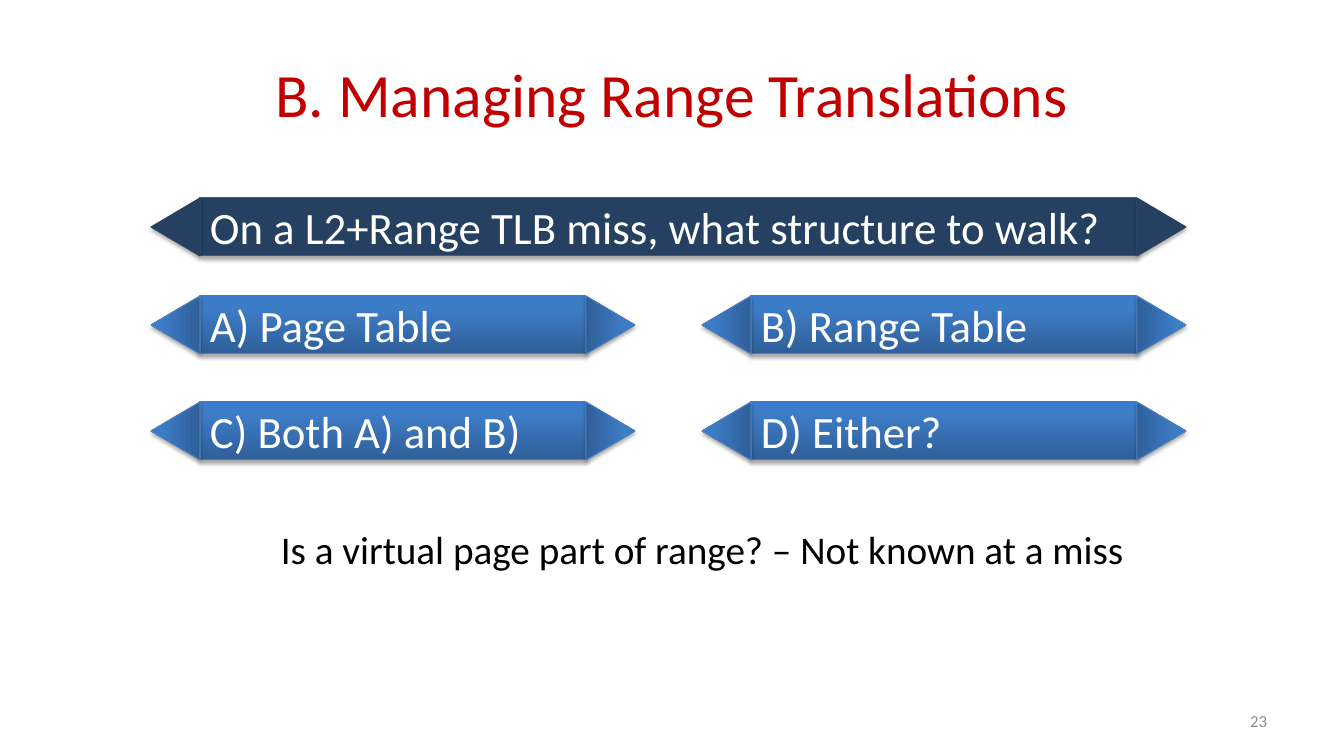
from copy import deepcopy

from lxml import etree
from pptx import Presentation
from pptx import util as u
from pptx.dml.color import RGBColor
from pptx.enum import shapes, text
from pptx.oxml.ns import qn

# Content
TITLE = "B. Managing Range Translations"
QUESTION = "On a L2+Range TLB miss, what structure to walk?"
ANSWERS = [
    ["A) Page Table", "B) Range Table"],
    ["C) Both A) and B)", "D) Either?"],
]
REMARK = "Is a virtual page part of range? – Not known at a miss"
PAGE_NUMBER = "23"

# Colours
RED = RGBColor(0xC0, 0x00, 0x00)
GRAY = RGBColor(0x8C, 0x8C, 0x8C)
BLACK = RGBColor(0x00, 0x00, 0x00)
WHITE = RGBColor(0xFF, 0xFF, 0xFF)
NAVY = RGBColor(0x25, 0x40, 0x61)
NAVY_EDGE = RGBColor(0x37, 0x60, 0x92)
BLUE_EDGE = RGBColor(0x4B, 0x7E, 0xBC)
BLUE_STOPS = [
    (0, RGBColor(0x2F, 0x5F, 0x99)),
    (0.8, RGBColor(0x3D, 0x7C, 0xC7)),
    (1, RGBColor(0x3A, 0x7C, 0xCB)),
]

# Layout in px
LEFT, RIGHT = 200, 1137
ANSWER_WIDTH = 386
BAR_HEIGHT, TIP_LENGTH = 58, 49
QUESTION_TOP, ANSWER_TOP, ROW_STEP = 198, 296, 106


def px(length):
    return round(length * 914400 / 100.8)


def box(left, top, width, height):
    return [px(length) for length in (left, top, width, height)]


def write(frame, words, size, color, align=text.PP_ALIGN.LEFT,
          anchor=text.MSO_ANCHOR.MIDDLE):
    frame.word_wrap = True
    frame.vertical_anchor = anchor
    paragraph = frame.paragraphs[0]
    paragraph.alignment = align
    run = paragraph.add_run()
    run.text = words
    run.font.name = "Calibri"
    run.font.size = u.Pt(size)
    run.font.color.rgb = color


def paint(part, edge, solid=None):
    """Fill with one colour, or with the blue gradient, and add a soft shadow."""
    properties = part._element.spPr
    if solid is not None:
        part.fill.solid()
        part.fill.fore_color.rgb = solid
    else:
        part.fill.gradient()
        part.fill.gradient_angle = 90
        stops = properties.find(".//" + qn("a:gsLst"))
        stops.insert(1, deepcopy(stops[0]))
        for stop, (position, color) in zip(part.fill.gradient_stops, BLUE_STOPS):
            stop.position = position
            stop.color.rgb = color
    part.line.color.rgb = edge
    part.line.width = u.Pt(0.75)
    part.shadow.inherit = False
    shadow = etree.SubElement(
        properties.find(qn("a:effectLst")), qn("a:outerShdw"),
        blurRad=str(u.Pt(3.1)), dist=str(u.Pt(1.8)), dir="5400000", rotWithShape="0")
    black = etree.SubElement(shadow, qn("a:srgbClr"), val="000000")
    etree.SubElement(black, qn("a:alpha"), val="35000")


def add_bar(slide, words, left, top, width, edge, tip_edge, solid=None):
    """Draw a bar with a pointed tip at both ends."""
    bar = slide.shapes.add_shape(
        shapes.MSO_SHAPE.RECTANGLE, *box(left, top, width, BAR_HEIGHT))
    paint(bar, edge, solid)
    write(bar.text_frame, words, 32, WHITE)
    middle = top + BAR_HEIGHT / 2
    for center, turn in ((left - TIP_LENGTH / 2, 270),
                         (left + width + TIP_LENGTH / 2, 90)):
        tip = slide.shapes.add_shape(
            shapes.MSO_SHAPE.ISOSCELES_TRIANGLE,
            *box(center - BAR_HEIGHT / 2, middle - TIP_LENGTH / 2,
                 BAR_HEIGHT, TIP_LENGTH))
        tip.rotation = turn
        paint(tip, tip_edge, solid)


def main():
    deck = Presentation()
    deck.slide_width, deck.slide_height = px(1344), px(756)
    slide = deck.slides.add_slide(deck.slide_layouts[6])

    # Title, remark and page number
    for words, place, size, color, align, anchor in (
        (TITLE, (67, 30, 1210, 126), 44, RED,
         text.PP_ALIGN.CENTER, text.MSO_ANCHOR.MIDDLE),
        (REMARK, (159, 520, 1086, 57), 28, BLACK,
         text.PP_ALIGN.CENTER, text.MSO_ANCHOR.TOP),
        (PAGE_NUMBER, (964, 701, 313, 40), 12, GRAY,
         text.PP_ALIGN.RIGHT, text.MSO_ANCHOR.MIDDLE),
    ):
        label = slide.shapes.add_textbox(*box(*place))
        write(label.text_frame, words, size, color, align=align, anchor=anchor)

    # Answers in a grid
    for row, answers in enumerate(ANSWERS):
        for answer, left in zip(answers, (LEFT, RIGHT - ANSWER_WIDTH)):
            add_bar(slide, answer, left, ANSWER_TOP + row * ROW_STEP,
                    ANSWER_WIDTH, BLUE_EDGE, BLUE_EDGE)

    # Question across both columns
    add_bar(slide, QUESTION, LEFT, QUESTION_TOP, RIGHT - LEFT,
            NAVY_EDGE, NAVY, solid=NAVY)

    deck.save("out.pptx")


if __name__ == "__main__":
    main()
